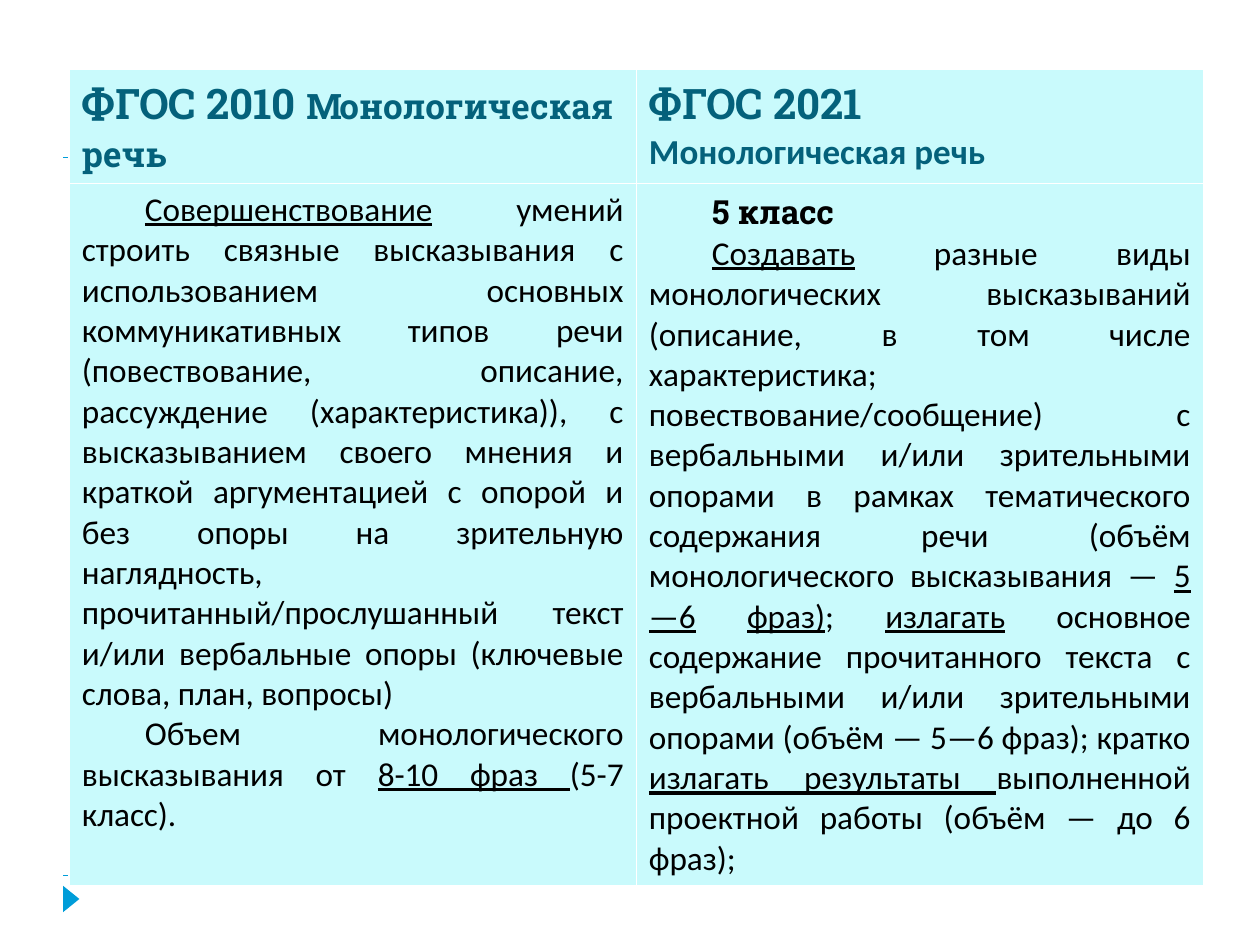
"""Build a slide comparing monologue speech requirements of two standards."""
from lxml.etree import SubElement
from pptx import Presentation
from pptx.dml.color import RGBColor
from pptx.enum.dml import MSO_LINE
from pptx.enum.shapes import MSO_CONNECTOR, MSO_SHAPE
from pptx.enum.text import PP_ALIGN
from pptx.oxml.ns import qn
from pptx.util import Inches, Pt

ACCENT = RGBColor(0x00, 0x9D, 0xD9)
HEADING = RGBColor(0x04, 0x61, 0x7B)
BLACK = RGBColor(0x00, 0x00, 0x00)
CELL_FILL = RGBColor(0xC9, 0xFA, 0xFC)
SLAB = "Roboto Slab"

LARGE = {"size": 24, "font": SLAB, "color": HEADING, "bold": True}
MEDIUM = {**LARGE, "size": 20}
PLAIN = {}
UNDERLINED = {"underline": True}

HEADERS = [
    [[("ФГОС 2010 ", LARGE), ("Монологическая речь", MEDIUM)]],
    [[("ФГОС 2021", LARGE)], [("Монологическая речь", {**MEDIUM, "font": "Calibri"})]],
]
REQUIREMENTS = [
    [
        [
            ("Совершенствование", UNDERLINED),
            (" умений строить связные высказывания с использованием основных "
             "коммуникативных типов речи (повествование, описание, рассуждение "
             "(характеристика)), с высказыванием своего мнения и краткой "
             "аргументацией с опорой и без опоры на зрительную наглядность, "
             "прочитанный/прослушанный текст и/или вербальные опоры (ключевые "
             "слова, план, вопросы)", PLAIN),
        ],
        [
            ("Объем монологического высказывания от ", PLAIN),
            ("8-10 фраз ", UNDERLINED),
            ("(5-7 класс). ", PLAIN),
        ],
    ],
    [
        [("5 класс", {"font": SLAB, "bold": True})],
        [
            ("Создавать", UNDERLINED),
            (" разные виды монологических высказываний (описание, в том числе "
             "характеристика; повествование/сообщение) с вербальными и/или "
             "зрительными опорами в рамках тематического содержания речи (объём "
             "монологического высказывания — ", PLAIN),
            ("5—6", UNDERLINED),
            (" ", {"bold": True}),
            ("фраз)", UNDERLINED),
            ("; ", PLAIN),
            ("излагать", UNDERLINED),
            (" основное содержание прочитанного текста с вербальными и/или "
             "зрительными опорами (объём — 5—6 фраз); кратко ", PLAIN),
            ("излагать результаты ", UNDERLINED),
            ("выполненной проектной работы (объём — до 6 фраз);", PLAIN),
        ],
    ],
]


def add_text(paragraph, text, size=19, font="Calibri", color=BLACK, bold=False, underline=False):
    run = paragraph.add_run()
    run.text = text
    run.font.size = Pt(size)
    run.font.name = font
    run.font.color.rgb = color
    run.font.bold = bold
    run.font.underline = underline


presentation = Presentation()
presentation.slide_width = width = Inches(10)
presentation.slide_height = height = Inches(7.5)
slide = presentation.slides.add_slide(presentation.slide_layouts[6])

margin = int(width * 0.05)
for line_top in (Inches(6.95), Inches(1.25)):
    line = slide.shapes.add_connector(
        MSO_CONNECTOR.STRAIGHT, margin, line_top, width - margin, line_top)
    line.line.color.rgb = ACCENT
    line.line.width = Pt(0.75)
    line.line.dash_style = MSO_LINE.DASH
    SubElement(line._element.spPr, qn("a:effectLst"))

marker = slide.shapes.add_shape(
    MSO_SHAPE.ISOSCELES_TRIANGLE, Inches(0.46), Inches(7.07), Inches(0.21), Inches(0.13))
marker.rotation = 90
marker.shadow.inherit = False
marker.fill.solid()
marker.fill.fore_color.rgb = ACCENT
marker.line.fill.background()

table_left = table_top = Inches(0.55)
table_width, table_height = int(width * 0.9), Inches(6.32)
table = slide.shapes.add_table(
    2, 2, table_left, table_top, table_width, table_height).table
table.horz_banding = False
table.rows[0].height = int(height * 0.12)
table.rows[1].height = table_height - table.rows[0].height

for row_index, row in enumerate((HEADERS, REQUIREMENTS)):
    for column_index, paragraphs in enumerate(row):
        cell = table.cell(row_index, column_index)
        cell.fill.solid()
        cell.fill.fore_color.rgb = CELL_FILL
        for index, runs in enumerate(paragraphs):
            frame = cell.text_frame
            paragraph = frame.add_paragraph() if index else frame.paragraphs[0]
            if row is REQUIREMENTS:
                paragraph.alignment = PP_ALIGN.JUSTIFY
                paragraph._p.get_or_add_pPr().set("indent", str(Inches(0.5)))
            for text, text_format in runs:
                add_text(paragraph, text, **text_format)

presentation.save("out.pptx")
